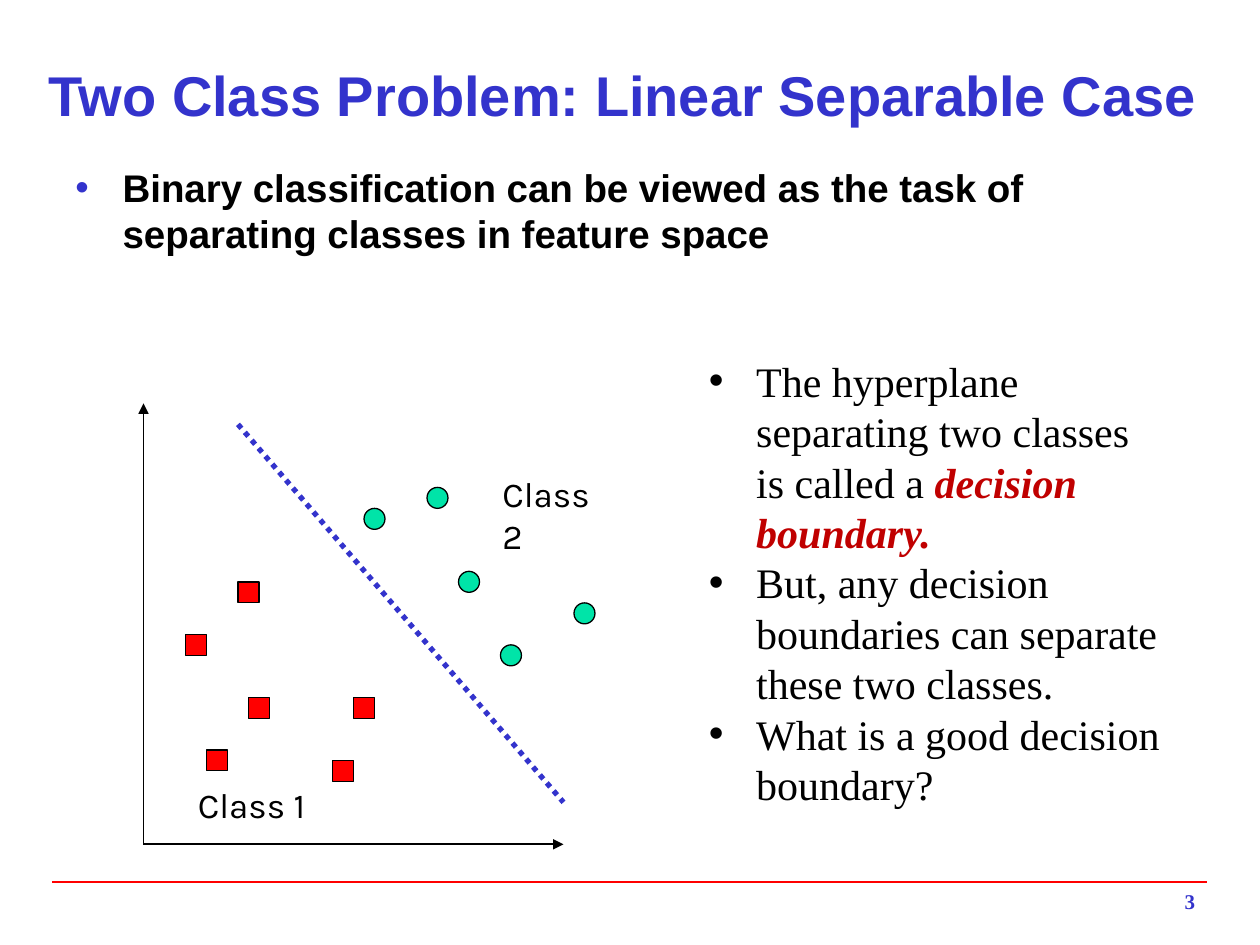
from dataclasses import dataclass

import lxml.etree
import pptx
import pptx.dml.color
import pptx.enum.dml
import pptx.enum.shapes
import pptx.enum.text
import pptx.oxml.ns
import pptx.util

Pt = pptx.util.Pt
RGBColor = pptx.dml.color.RGBColor
Align = pptx.enum.text.PP_ALIGN
Shape = pptx.enum.shapes.MSO_SHAPE
Dash = pptx.enum.dml.MSO_LINE
qn = pptx.oxml.ns.qn

BLUE = RGBColor(0x33, 0x33, 0xCC)
RED = RGBColor(0xFF, 0x00, 0x00)
DARK_RED = RGBColor(0xC0, 0x00, 0x00)
GREEN = RGBColor(0x00, 0xE4, 0xA8)
BLACK = RGBColor(0x00, 0x00, 0x00)

MARKER_SIZE = 12
BULLET_INDENT = 27
LINE_SPACING = 1.2


@dataclass(frozen=True)
class Box:
    left: float
    top: float
    width: float
    height: float


@dataclass(frozen=True)
class Style:
    font: str
    size: float
    color: RGBColor = BLACK
    bold: bool = False
    italic: bool = False


@dataclass(frozen=True)
class Line:
    start: tuple[float, float]
    end: tuple[float, float]
    color: RGBColor
    width: float
    arrow: bool = False
    dash: Dash | None = None


@dataclass(frozen=True)
class PointClass:
    geometry: Shape
    color: RGBColor
    corners: tuple[tuple[float, float], ...]


TITLE = Style("Arial", 32, BLUE, bold=True)
STATEMENT = Style("Arial", 22, bold=True)
LABEL = Style("Karla", 20)
REMARK = Style("Times New Roman", 24)
KEY_TERM = Style("Times New Roman", 24, DARK_RED, bold=True, italic=True)
PAGE_NUMBER = Style("Times New Roman", 12, BLUE, bold=True)

ORIGIN = (82, 482.5)
LINES = (
    Line((30, 504), (690, 504), RED, 1),
    Line(ORIGIN, (82, 230.5), BLACK, 1, arrow=True),
    Line(ORIGIN, (322, 482.5), BLACK, 1, arrow=True),
    Line((136, 242.5), (322, 458.5), BLUE, 3, dash=Dash.ROUND_DOT),
)
POINT_CLASSES = (
    PointClass(Shape.OVAL, GREEN, (
        (244, 278.5), (262, 326.5), (328, 344.5), (208, 290.5), (286, 368.5))),
    PointClass(Shape.RECTANGLE, RED, (
        (106, 362.5), (202, 398.5), (190, 434.5), (142, 398.5), (118, 428.5),
        (136, 332.5))),
)
REMARKS = (
    (("The hyperplane separating two classes is called a ", REMARK),
     ("decision boundary.", KEY_TERM)),
    (("But, any decision boundaries can separate these two classes.", REMARK),),
    (("What is a good decision boundary?", REMARK),),
)


def add_run(paragraph, text: str, style: Style) -> None:
    run = paragraph.add_run()
    run.text = text
    font = run.font
    font.name = style.font
    font.size = Pt(style.size)
    font.bold = style.bold
    font.italic = style.italic
    font.color.rgb = style.color


def add_text(slide, box: Box, text: str, style: Style,
             align: Align = Align.LEFT, wrap: bool = True):
    shape = slide.shapes.add_textbox(
        Pt(box.left), Pt(box.top), Pt(box.width), Pt(box.height))
    shape.text_frame.word_wrap = wrap
    paragraph = shape.text_frame.paragraphs[0]
    paragraph.alignment = align
    add_run(paragraph, text, style)
    return shape


def add_bullets(slide, box: Box, items, bullet_color: RGBColor) -> None:
    shape = slide.shapes.add_textbox(
        Pt(box.left), Pt(box.top), Pt(box.width), Pt(box.height))
    frame = shape.text_frame
    frame.word_wrap = True
    for index, item in enumerate(items):
        paragraph = frame.add_paragraph() if index else frame.paragraphs[0]
        paragraph.line_spacing = Pt(item[0][1].size * LINE_SPACING)
        for text, style in item:
            add_run(paragraph, text, style)
        properties = paragraph._p.get_or_add_pPr()
        properties.set("marL", str(Pt(BULLET_INDENT)))
        properties.set("indent", str(-Pt(BULLET_INDENT)))
        color = lxml.etree.SubElement(properties, qn("a:buClr"))
        lxml.etree.SubElement(color, qn("a:srgbClr"), val=str(bullet_color))
        lxml.etree.SubElement(properties, qn("a:buFont"), typeface="Arial")
        lxml.etree.SubElement(properties, qn("a:buChar"), char="•")


def add_line(slide, line: Line) -> None:
    connector = slide.shapes.add_connector(
        pptx.enum.shapes.MSO_CONNECTOR.STRAIGHT,
        *(Pt(value) for value in line.start + line.end))
    connector.line.color.rgb = line.color
    connector.line.width = Pt(line.width)
    if line.dash is not None:
        connector.line.dash_style = line.dash
    if line.arrow:
        lxml.etree.SubElement(
            connector.line._get_or_add_ln(), qn("a:tailEnd"), type="triangle")
    lxml.etree.SubElement(connector._element.spPr, qn("a:effectLst"))


def add_points(slide, point_class: PointClass) -> None:
    for left, top in point_class.corners:
        marker = slide.shapes.add_shape(
            point_class.geometry, Pt(left), Pt(top),
            Pt(MARKER_SIZE), Pt(MARKER_SIZE))
        marker.shadow.inherit = False
        marker.fill.solid()
        marker.fill.fore_color.rgb = point_class.color
        marker.line.color.rgb = BLACK
        marker.line.width = Pt(0.75)


def main() -> None:
    presentation = pptx.Presentation()
    presentation.slide_width = Pt(720)
    presentation.slide_height = Pt(540)
    slide = presentation.slides.add_slide(presentation.slide_layouts[6])

    title = add_text(slide, Box(20, 30, 672, 48),
                     "Two Class Problem: Linear Separable Case", TITLE, Align.CENTER)
    title.text_frame.margin_left = title.text_frame.margin_right = 0
    title.text_frame.vertical_anchor = pptx.enum.text.MSO_ANCHOR.MIDDLE
    statement = ("Binary classification can be viewed as the task of "
                 "separating classes in feature space")
    add_bullets(slide, Box(36, 90, 648, 390), (((statement, STATEMENT),),), BLUE)

    for line in LINES:
        add_line(slide, line)
    for point_class in POINT_CLASSES:
        add_points(slide, point_class)
    add_text(slide, Box(106, 444, 76, 31), "Class 1", LABEL, wrap=False)
    add_text(slide, Box(280, 266.5, 76, 31), "Class 2", LABEL)

    add_bullets(slide, Box(398, 199.5, 273, 269), REMARKS, BLACK)
    add_text(slide, Box(540, 504, 150, 24), "3", PAGE_NUMBER, Align.RIGHT)
    presentation.save("out.pptx")


if __name__ == "__main__":
    main()
